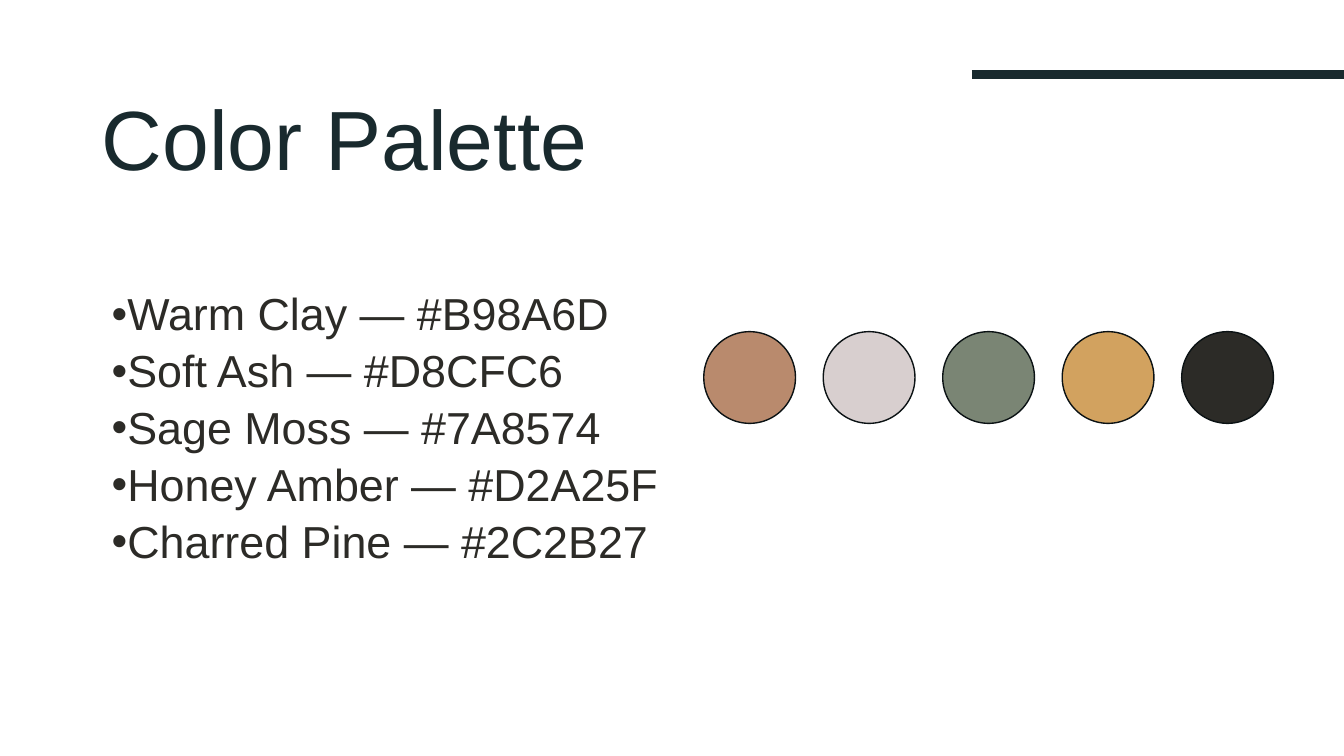
"""Builds the Color Palette slide."""
import pptx
import pptx.util
import pptx.dml.color
import pptx.enum.shapes
import pptx.enum.text
import pptx.oxml
import pptx.oxml.ns

Inches = pptx.util.Inches
Pt = pptx.util.Pt

HEADING = "Color Palette"
PALETTE = [
    ("Warm Clay — #B98A6D", "B98A6D"),
    ("Soft Ash — #D8CFC6", "D8CFCF"),
    ("Sage Moss — #7A8574", "7A8574"),
    ("Honey Amber — #D2A25F", "D2A25F"),
    ("Charred Pine — #2C2B27", "2C2B27"),
]
COLORS = {"heading": "192A2E", "entry": "2C2B27", "outline": "0B1214", "rule": "192A2E"}
HEADING_BOX = (0.91, 0.74, 11.5, 1.37)
ENTRIES_BOX = (1.01, 2.85, 5.76, 1.8)
RULE = (9.64, 0.74, 13.34, 0.74)
SWATCH = {"left": 6.98, "top": 3.29, "size": 0.91, "pitch": 1.185}
HEADING_FORMAT = {"line_spacing": 0.9}
ENTRY_FORMAT = {"line_spacing": 0.9, "space_after": Pt(6)}
FONT = "Arial"


def rgb(value):
    return pptx.dml.color.RGBColor.from_string(value)


def drawing_element(tag, attributes=""):
    return pptx.oxml.parse_xml(
        f'<a:{tag} {pptx.oxml.ns.nsdecls("a")} {attributes}/>')


def add_text(slide, box, lines, size, color, anchor, paragraph_format, bullet=None):
    frame = slide.shapes.add_textbox(*map(Inches, box)).text_frame
    frame.word_wrap = True
    frame.vertical_anchor = anchor
    frame.text = "\n".join(lines)
    for paragraph in frame.paragraphs:
        for key, value in paragraph_format.items():
            setattr(paragraph, key, value)
        font = paragraph.runs[0].font
        for key, value in {"name": FONT, "size": Pt(size)}.items():
            setattr(font, key, value)
        font.color.rgb = rgb(color)
        if bullet:
            properties = paragraph._p.get_or_add_pPr()
            properties.append(drawing_element("buFont", f'typeface="{FONT}"'))
            properties.append(drawing_element("buChar", f'char="{bullet}"'))


def add_rule(slide):
    rule = slide.shapes.add_connector(
        pptx.enum.shapes.MSO_CONNECTOR.STRAIGHT, *map(Inches, RULE))
    rule.line.color.rgb = rgb(COLORS["rule"])
    rule.line.width = Pt(6)
    rule._element.spPr.append(drawing_element("effectLst"))


def add_swatch(slide, index, color):
    left = SWATCH["left"] + index * SWATCH["pitch"]
    box = (left, SWATCH["top"], SWATCH["size"], SWATCH["size"])
    swatch = slide.shapes.add_shape(
        pptx.enum.shapes.MSO_SHAPE.OVAL, *map(Inches, box))
    swatch.shadow.inherit = False
    swatch.fill.solid()
    swatch.fill.fore_color.rgb = rgb(color)
    swatch.line.color.rgb = rgb(COLORS["outline"])
    swatch.line.width = Pt(1)


def main():
    deck = pptx.Presentation()
    deck.slide_width, deck.slide_height = Inches(13.33), Inches(7.5)
    slide = deck.slides.add_slide(deck.slide_layouts[6])
    anchors = pptx.enum.text.MSO_ANCHOR
    add_rule(slide)
    add_text(slide, HEADING_BOX, [HEADING], 60, COLORS["heading"],
             anchors.MIDDLE, HEADING_FORMAT)
    add_text(slide, ENTRIES_BOX, [entry for entry, _ in PALETTE], 32,
             COLORS["entry"], anchors.TOP, ENTRY_FORMAT, "•")
    for index, (_, color) in enumerate(PALETTE):
        add_swatch(slide, index, color)
    deck.save("out.pptx")


if __name__ == "__main__":
    main()
